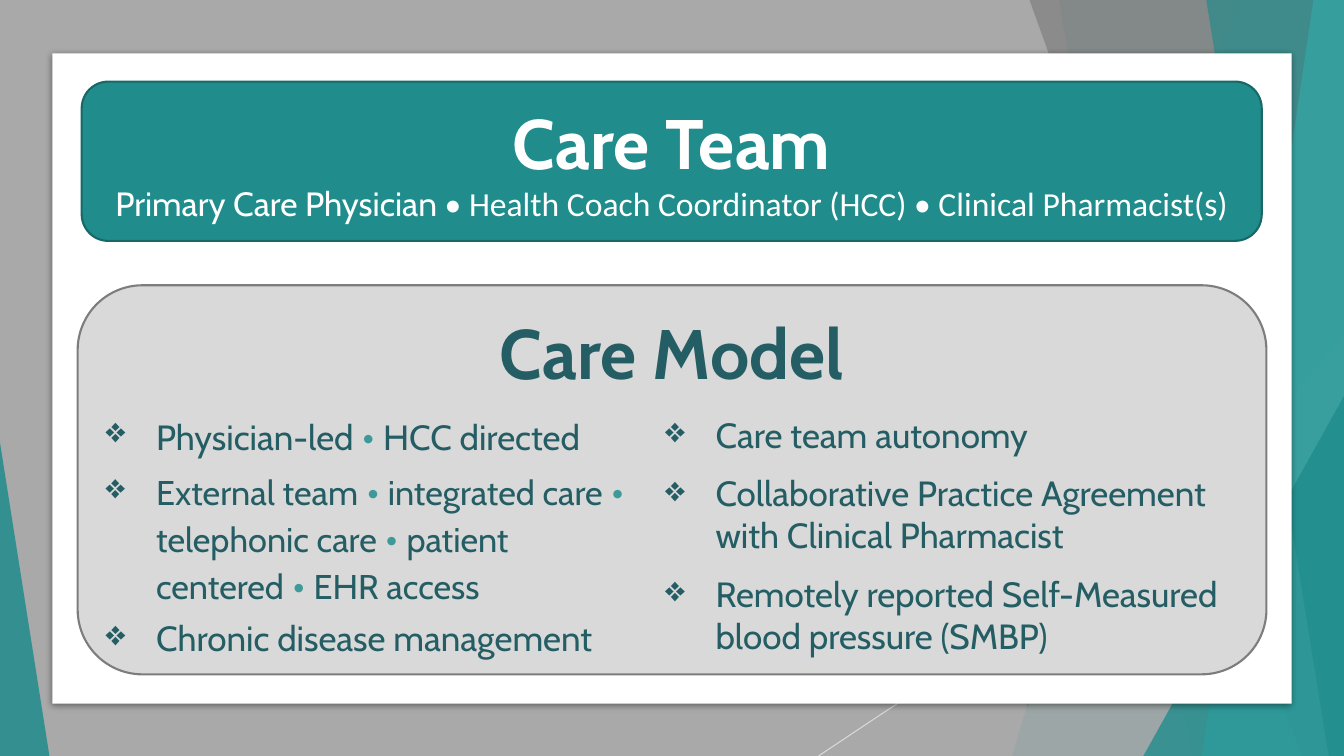
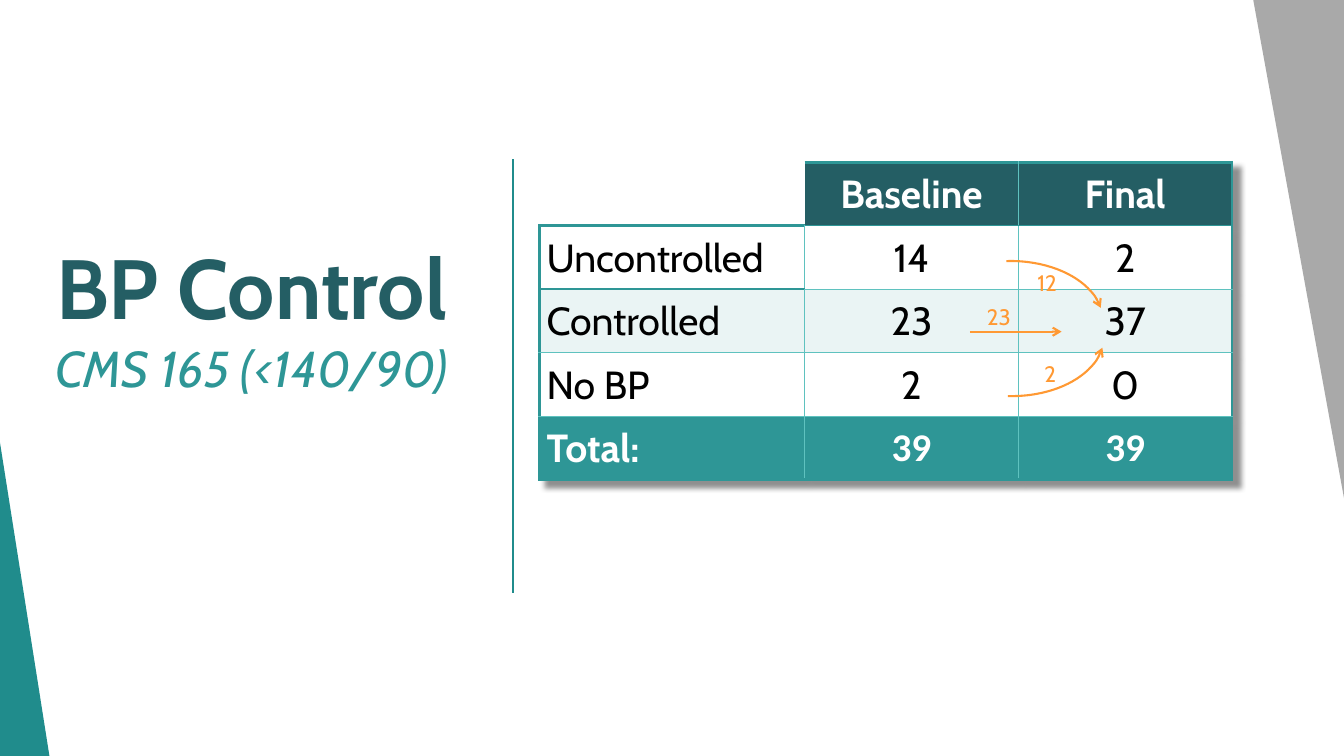
from lxml import etree
from pptx import Presentation
from pptx.dml.color import RGBColor
from pptx.enum.shapes import MSO_CONNECTOR, MSO_SHAPE
from pptx.enum.text import MSO_ANCHOR, PP_ALIGN
from pptx.oxml.ns import qn
from pptx.util import Emu, Inches, Pt

RECT, ROUND = MSO_SHAPE.RECTANGLE, MSO_SHAPE.ROUNDED_RECTANGLE
TRIANGLE, ARC = MSO_SHAPE.ISOSCELES_TRIANGLE, MSO_SHAPE.ARC
STRAIGHT = MSO_CONNECTOR.STRAIGHT
LEFT, CENTER = PP_ALIGN.LEFT, PP_ALIGN.CENTER
TOP, MIDDLE = MSO_ANCHOR.TOP, MSO_ANCHOR.MIDDLE

W, H = Inches(13.33), Inches(7.5)
FONT, ALT_FONT = "Cabin", "Calibri"
COLORS = {
    "teal": "208C8C", "teal_edge": "186868", "dark": "245E64",
    "mid": "2E9696", "dot": "3E9A99", "pale": "5FC2BF", "aqua": "5AD9D9",
    "tint": "EAF4F4", "gray": "A9A9A9", "gray_dark": "7F7F7F",
    "gray_edge": "7D7D7D", "gray_light": "D9D9D9", "orange": "FF9933",
    "white": "FFFFFF", "black": "000000",
}
TEAL_WEDGE = (0, 58.53, 3.68, 41.47)


# Lengths: percent of the slide's width and height
def px(share):
    return Emu(round(W * share / 100))


def py(share):
    return Emu(round(H * share / 100))


def place(box):
    x, y, w, h = box
    return px(x), py(y), px(w), py(h)


def rgb(name):
    return RGBColor.from_string(COLORS[name])


def sub(parent, tag, **attrs):
    el = etree.SubElement(parent, qn(tag))
    for key, value in attrs.items():
        el.set(key, str(value))
    return el


# Text
def add_text(tf, runs, first=True, size=25, color="dark", font=FONT, bold=False,
             italic=False, align=LEFT, before=0, after=0, bullet=None, indent=0):
    """Write one paragraph; runs is a string or a list of (text, overrides)."""
    p = tf.paragraphs[0] if first else tf.add_paragraph()
    p.alignment = align
    p.space_before, p.space_after = Pt(before), Pt(after)
    pPr = p._p.get_or_add_pPr()
    if indent:
        pPr.set("marL", str(Inches(indent)))
    if bullet:
        pPr.set("indent", str(-Inches(indent)))
        sub(pPr, "a:buChar", char=bullet)
    base = {"size": size, "color": color, "font": font, "bold": bold, "italic": italic}
    for text, changes in [(runs, {})] if isinstance(runs, str) else runs:
        fmt = {**base, **changes}
        r = p.add_run()
        r.text = text
        r.font.name, r.font.size = fmt["font"], Pt(fmt["size"])
        r.font.bold, r.font.italic = fmt["bold"], fmt["italic"]
        r.font.color.rgb = rgb(fmt["color"])


def add_box(slide, box, anchor=TOP):
    tf = slide.shapes.add_textbox(*place(box)).text_frame
    tf.word_wrap, tf.vertical_anchor = True, anchor
    return tf


def add_bullets(slide, box, items, after):
    tf = add_box(slide, box)
    for i, runs in enumerate(items):
        add_text(tf, runs, first=i == 0, after=after, bullet="❖", indent=0.5)


def dotted(parts, size):
    """Runs of the given parts, parted by larger teal dots."""
    runs = []
    for i, part in enumerate(parts):
        if i:
            runs.append((" • ", {"size": 28, "color": "dot"}))
        runs.append((part, {"size": size}))
    return runs


# Shapes and lines
def paint(sp, fill=None, alpha=100, line=None, width=1):
    sp.shadow.inherit = False
    if fill:
        sp.fill.solid()
        sp.fill.fore_color.rgb = rgb(fill)
        if alpha < 100:
            clr = sp.element.spPr.find(qn("a:solidFill"))[0]
            sub(clr, "a:alpha", val=alpha * 1000)
    else:
        sp.fill.background()
    if line:
        sp.line.color.rgb, sp.line.width = rgb(line), Pt(width)
    else:
        sp.line.fill.background()
    return sp


def add_shape(slide, kind, box, adj=(), **look):
    sp = slide.shapes.add_shape(kind, *place(box))
    for i, value in enumerate(adj):
        sp.adjustments[i] = value
    return paint(sp, **look)


def add_facet(slide, points, fill, alpha):
    pts = [(px(x), py(y)) for x, y in points]
    builder = slide.shapes.build_freeform(*pts[0])
    builder.add_line_segments(pts[1:], close=True)
    paint(builder.convert_to_shape(), fill, alpha)


def add_arrowhead(sp):
    sub(sp.element.spPr.find(qn("a:ln")), "a:tailEnd", type="arrow")


def add_line(slide, start, end, color, width):
    ln = slide.shapes.add_connector(
        STRAIGHT, px(start[0]), py(start[1]), px(end[0]), py(end[1]))
    ln.line.color.rgb, ln.line.width = rgb(color), Pt(width)
    sub(ln.element.spPr, "a:effectLst")
    return ln


def cast_shadow(effects, blur, dist, angle, alpha):
    shadow = sub(effects, "a:outerShdw", blurRad=Pt(blur), dist=Pt(dist),
                 dir=angle * 60000, algn="tl", rotWithShape=0)
    sub(sub(shadow, "a:srgbClr", val=COLORS["black"]), "a:alpha", val=alpha * 1000)


def add_backdrop(slide):
    slide.background.fill.solid()
    slide.background.fill.fore_color.rgb = rgb("gray")
    add_line(slide, (100, 53.73), (60.9, 100), "gray_light", 0.75)
    # Facets reach the right edge: left end at top, left end at bottom
    back = [(92.1, 75.3, "teal", 30), (78.77, 88.73, "teal", 20)]
    front = [(76.6, 96.83, "gray_dark", 70), (97.73, 89.42, "aqua", 70),
             (89.75, 98.86, "teal", 65)]

    def facets(rows):
        for top, bottom, fill, alpha in rows:
            add_facet(slide, [(top, 0), (100, 0), (100, 100), (bottom, 100)], fill, alpha)

    facets(back)
    add_shape(slide, TRIANGLE, (73.3, 44.4, 26.7, 55.6), [1], fill="gray", alpha=72)
    facets(front)
    add_shape(slide, TRIANGLE, (85.07, 52.4, 14.93, 47.6), [1], fill="teal", alpha=80)
    add_shape(slide, TRIANGLE, TEAL_WEDGE, [0], fill="teal", alpha=85)


# Table
def cell_edge(r, c, side):
    """Colour and width of one side of a cell, or None."""
    if (r, c) == (0, 0):
        return ("mid", 2.25) if side == "B" else None
    if (r, c, side) == (0, 1, "L"):
        return None
    outer = {"L": c == 0, "T": r == 0 or (r, c) == (1, 0), "R": c == 2, "B": r == 4}
    if outer[side]:
        return "mid", 2.25
    under_header = (r, side) in ((0, "B"), (1, "T"))
    under_first = (r, c, side) in ((1, 0, "B"), (2, 0, "T"))
    return ("mid" if under_header or under_first else "pale"), 1.5 if under_first else 1


def set_edges(cell, r, c):
    tcPr = cell._tc.get_or_add_tcPr()
    for i, side in enumerate("LRTB"):
        edge = cell_edge(r, c, side)
        ln = etree.Element(qn("a:ln" + side))
        if edge:
            ln.set("w", str(Pt(edge[1])))
            sub(sub(ln, "a:solidFill"), "a:srgbClr", val=COLORS[edge[0]])
        else:
            sub(ln, "a:noFill")
        tcPr.insert(i, ln)


def add_results(slide, rows, x, y, col_widths, row_height):
    box = (x, y, sum(col_widths), row_height * len(rows))
    tbl = slide.shapes.add_table(len(rows), len(col_widths), *place(box)).table
    tbl.first_row = tbl.horz_banding = False
    tblPr = tbl._tbl.tblPr
    tblPr.find(qn("a:tableStyleId")).text = "{2D5ABB26-0587-4C30-8999-92F81FD0307C}"
    effects = etree.Element(qn("a:effectLst"))
    cast_shadow(effects, 4, 6, 45, 43)
    tblPr.insert(0, effects)
    for col, width in zip(tbl.columns, col_widths):
        col.width = px(width)
    last = len(rows) - 1
    fills = {0: "dark", 2: "tint", last: "mid"}
    for r, values in enumerate(rows):
        tbl.rows[r].height = py(row_height)
        strong = r in (0, last)
        for c, value in enumerate(values):
            cell = tbl.cell(r, c)
            cell.margin_left = cell.margin_right = cell.margin_top = Inches(0.01)
            cell.margin_bottom = 0
            cell.vertical_anchor = MIDDLE
            cell.fill.solid()
            cell.fill.fore_color.rgb = rgb(fills.get(r, "white") if value else "white")
            set_edges(cell, r, c)
            if value:
                add_text(cell.text_frame, value, size=28, bold=strong,
                         color="white" if strong else "black",
                         font=ALT_FONT if r == last and c else FONT,
                         align=CENTER if c else LEFT, indent=0 if c else 0.06)


# Slides
def build_care(slide):
    add_backdrop(slide)
    panel = add_shape(slide, RECT, (3.9, 7.07, 92.2, 86), fill="white")
    cast_shadow(panel.element.spPr.find(qn("a:effectLst")), 5, 1.4, 90, 43)

    team = add_shape(slide, ROUND, (6.08, 10.8, 87.8, 21.07), fill="teal",
                     line="teal_edge", width=1.5).text_frame
    team.word_wrap, team.vertical_anchor = True, MIDDLE
    add_text(team, "Care Team", size=50, color="white", bold=True, align=CENTER)
    add_text(team, [("Primary Care Physician ", {}),
                    ("• Health Coach Coordinator (HCC) • Clinical Pharmacist(s)",
                     {"font": ALT_FONT})],
             first=False, size=24, color="white", align=CENTER, after=12)

    model = add_shape(slide, ROUND, (5.78, 37.73, 88.45, 51.47), fill="gray_light",
                      line="gray_edge", width=1.5).text_frame
    model.word_wrap, model.vertical_anchor = True, TOP
    add_text(model, "Care Model", size=50, bold=True, align=CENTER, after=12)

    add_bullets(slide, (7.13, 53.73, 40.44, 34.27), [
        dotted(["Physician-led", "HCC directed"], 25),
        dotted(["External team", "integrated care", "telephonic care",
                "patient centered", "EHR access"], 24.5),
        "Chronic disease management",
    ], after=6)
    add_bullets(slide, (48.76, 54, 45.46, 33.87), [
        "Care team autonomy",
        "Collaborative Practice Agreement with Clinical Pharmacist",
        "Remotely reported Self-Measured blood pressure (SMBP)",
    ], after=12)


def build_control(slide):
    title = add_box(slide, (1.73, 13.07, 33.98, 57.6), MIDDLE)
    add_text(title, [("BP Control ", {"size": 60, "bold": True}),
                     ("CMS 165 (<140/90)", {"size": 36, "color": "mid", "italic": True})],
             align=CENTER, after=24)
    add_shape(slide, TRIANGLE, TEAL_WEDGE, [0], fill="teal")
    add_line(slide, (38.18, 21.07), (38.18, 78.4), "teal", 1)
    corner = add_shape(slide, TRIANGLE, (93.25, 0, 6.9, 67.33), [1], fill="gray")
    corner.rotation = 180
    corner.element.spPr.find(qn("a:xfrm")).set("flipH", "1")

    add_results(slide, [
        ("", "Baseline", "Final"),
        ("Uncontrolled", "14", "2"),
        ("Controlled", "23", "37"),
        ("No BP", "2", "0"),
        ("Total:", "39", "39"),
    ], 40.14, 21.47, (19.73, 15.9, 15.9), 8.4)

    # Arrows from baseline to final
    for x, y, adj, flip in [(68.42, 36.53, (159.7, 211.63), True),
                            (68.34, 34.53, (159.44, 211), False)]:
        arc = add_shape(slide, ARC, (x, y, 13.73, 15.87), adj, line="orange", width=1.5)
        add_arrowhead(arc)
        if flip:
            arc.element.spPr.find(qn("a:xfrm")).set("flipV", "1")
    add_arrowhead(add_line(slide, (72.17, 43.87), (78.99, 43.87), "orange", 1.5))
    for text, x, y in [("2", 76.97, 46.93), ("12", 76.44, 34.93), ("23", 72.69, 39.47)]:
        add_text(add_box(slide, (x, y, 3.83, 4.93)), text, size=16, color="orange")


def main():
    prs = Presentation()
    prs.slide_width, prs.slide_height = W, H
    for build in (build_care, build_control):
        build(prs.slides.add_slide(prs.slide_layouts[6]))
    prs.save("out.pptx")


if __name__ == "__main__":
    main()
